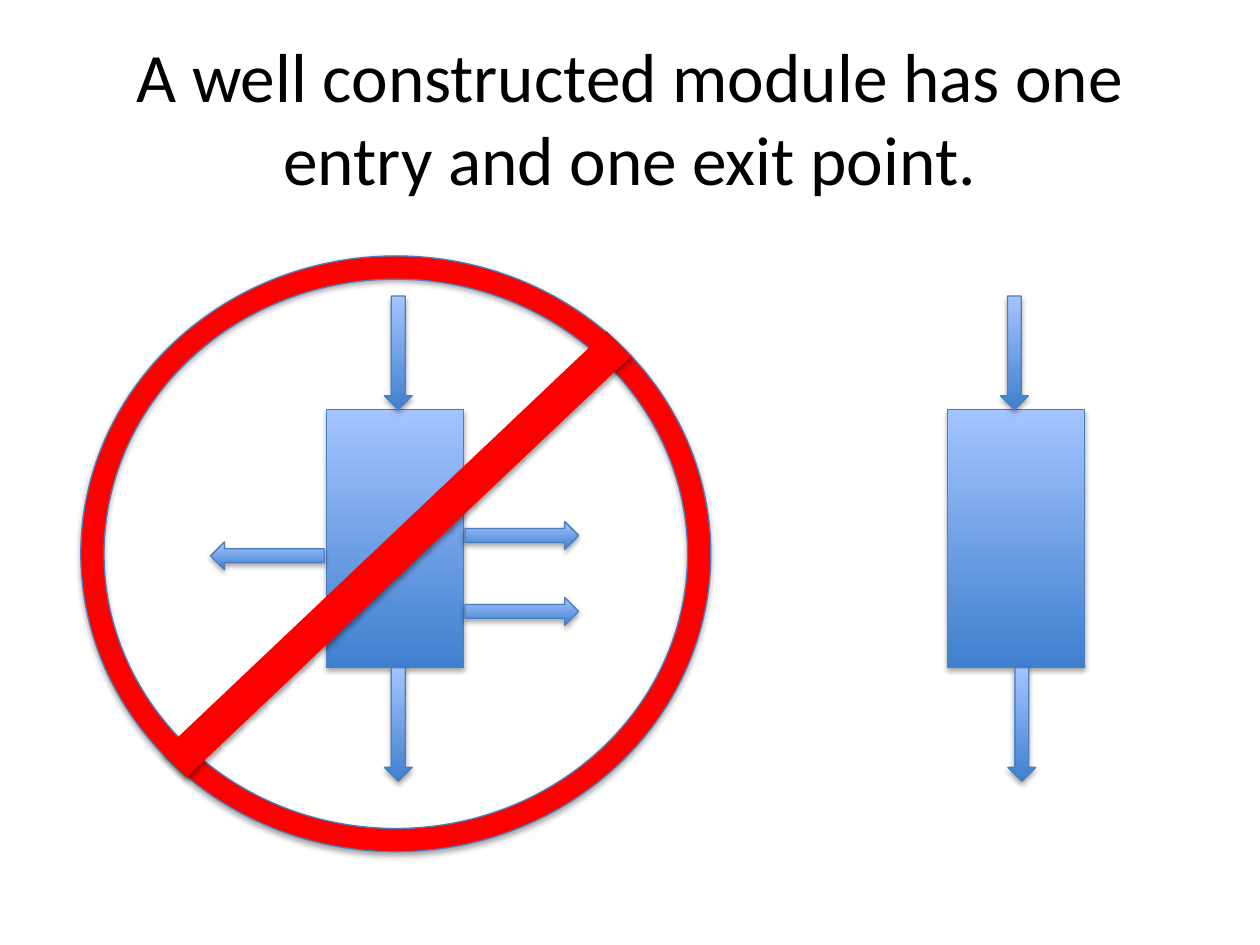
from lxml.etree import SubElement
from pptx import Presentation
from pptx.dml.color import RGBColor
from pptx.enum.shapes import MSO_CONNECTOR, MSO_SHAPE
from pptx.enum.text import MSO_ANCHOR, MSO_AUTO_SIZE, PP_ALIGN
from pptx.oxml.ns import qn
from pptx.util import Cm, Pt

COLORS = {
    "text": "000000",
    "outline": "4B7EBC",
    "dark": "3F80CE",
    "light": "A4C4FF",
    "ban": "FF0000",
    "shadow": "000000",
}
TITLE_FONT = {"name": "Calibri", "size": Pt(39.6)}
TITLE_FRAME = {"word_wrap": True, "auto_size": MSO_AUTO_SIZE.NONE,
               "vertical_anchor": MSO_ANCHOR.MIDDLE}

# Lengths in centimetres
MODULE_TOP, MODULE_WIDTH, MODULE_HEIGHT = 8.26, 2.77, 5.2
ARROW_WIDTH, ARROW_LENGTH = 0.56, 2.29
ENTRY_TOP = MODULE_TOP - ARROW_LENGTH
EXIT_TOP = MODULE_TOP + MODULE_HEIGHT


def color(name):
    return RGBColor.from_string(COLORS[name])


def apply(target, values):
    for name, value in values.items():
        setattr(target, name, value)


class SlideBuilder:
    """Holds the shared style and the current slide."""

    def __init__(self, page):
        self.page = page

    def title(self, text, left, top, width, height):
        box = self.page.shapes.title
        apply(box, {"left": Cm(left), "top": Cm(top),
                    "width": Cm(width), "height": Cm(height)})
        apply(box.text_frame, TITLE_FRAME)
        para = box.text_frame.paragraphs[0]
        para.alignment = PP_ALIGN.CENTER
        span = para.add_run()
        span.text = text
        apply(span.font, TITLE_FONT)
        span.font.color.rgb = color("text")

    def shadow(self, shape, distance, opacity):
        effects = SubElement(shape._element.spPr, qn("a:effectLst"))
        outer = SubElement(effects, qn("a:outerShdw"), blurRad="40000",
                           dist=str(distance), dir="5400000", rotWithShape="0")
        shade = SubElement(outer, qn("a:srgbClr"), val=COLORS["shadow"])
        SubElement(shade, qn("a:alpha"), val=str(opacity * 1000))

    def shape(self, kind, left, top, width, height, fill=None):
        shape = self.page.shapes.add_shape(
            kind, Cm(left), Cm(top), Cm(width), Cm(height))
        if fill:
            shape.fill.solid()
            shape.fill.fore_color.rgb = color(fill)
        else:
            self.gradient(shape)
        shape.line.color.rgb = color("outline")
        shape.line.width = Pt(0.75)
        self.shadow(shape, 23000, 35)
        return shape

    def gradient(self, shape):
        shape.fill.gradient()
        shape.fill.gradient_angle = 90
        for stop, name in zip(shape.fill.gradient_stops, ("dark", "light")):
            stop.color.rgb = color(name)
        # Keep the shading upright on turned arrows
        shape._element.spPr.find(qn("a:gradFill")).set("rotWithShape", "0")

    def module(self, left):
        self.shape(MSO_SHAPE.FLOWCHART_PROCESS, left, MODULE_TOP,
                   MODULE_WIDTH, MODULE_HEIGHT)

    def arrow(self, left, top, rotation=0):
        arrow = self.shape(MSO_SHAPE.DOWN_ARROW, left, top,
                           ARROW_WIDTH, ARROW_LENGTH)
        arrow.rotation = rotation

    def ring(self, left, top, width, height):
        ring = self.shape(MSO_SHAPE.DONUT, left, top, width, height, "ban")
        ring.adjustments[0] = 0.039

    def bar(self, *ends):
        bar = self.page.shapes.add_connector(
            MSO_CONNECTOR.STRAIGHT, *(Cm(value) for value in ends))
        bar.line.color.rgb = color("ban")
        bar.line.width = Pt(20)
        self.shadow(bar, 20000, 38)


def main():
    deck = Presentation()
    deck.slide_width, deck.slide_height = Cm(25.4), Cm(19.05)
    page = deck.slides.add_slide(deck.slide_layouts[5])
    builder = SlideBuilder(page)

    builder.title("A well constructed module has one entry and one exit point.",
                  1.27, 0.76, 22.86, 3.18)

    # Bad module: one entry, four exits
    builder.module(6.58)
    builder.arrow(7.75, ENTRY_TOP)
    for top in (9.65, 11.18):
        builder.arrow(10.24, top, rotation=270)
    builder.arrow(7.75, EXIT_TOP)
    builder.arrow(5.11, 10.06, rotation=90)

    # Prohibition sign
    builder.ring(1.63, 5.16, 12.7, 12.01)
    builder.bar(12.47, 6.93, 3.51, 15.42)

    # Good module: one entry, one exit
    builder.module(19.1)
    builder.arrow(20.17, ENTRY_TOP)
    builder.arrow(20.32, EXIT_TOP)

    deck.save("out.pptx")


if __name__ == "__main__":
    main()
